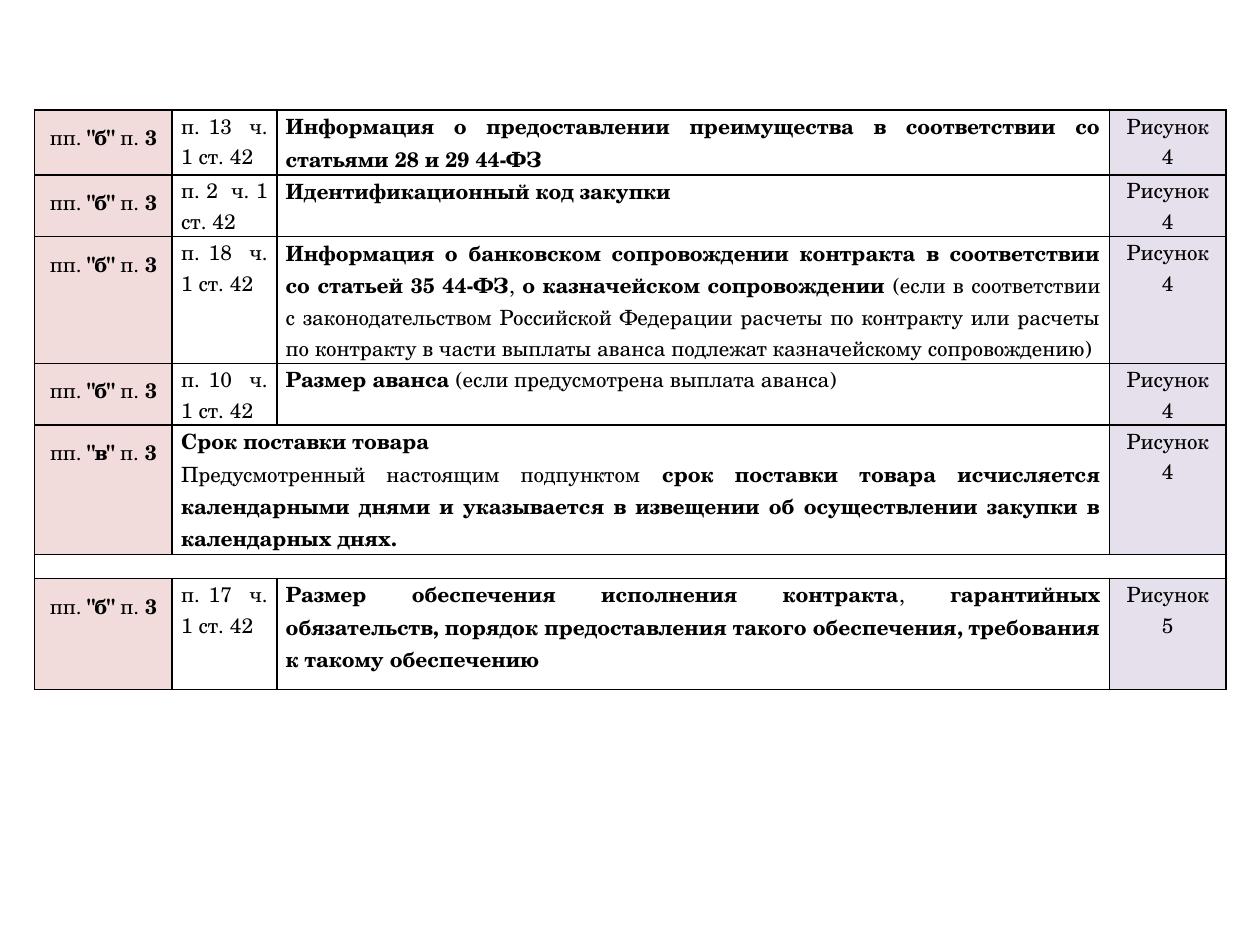
from lxml import etree
from pptx import Presentation
from pptx import util as u
from pptx.dml.color import RGBColor
from pptx.enum import text
from pptx.oxml.ns import qn

PINK, LILAC, BLACK = "F2DCDB", "E6E0EC", "000000"
COLUMN_WIDTHS = [2.77, 2.11, 16.79, 2.34]
CENTER, JUSTIFY = text.PP_ALIGN.CENTER, text.PP_ALIGN.JUSTIFY
POINT_B = 'пп. **"б" **п. **3**'

# Each row: height in cm, then cell texts; ** switches bold, None continues a merged cell
ROWS = [
    (1.17, [POINT_B, "п. 13  ч. 1 ст. 42",
            "**Информация о предоставлении преимущества в соответствии со "
            "статьями 28 и 29 44-ФЗ**", "Рисунок 4"]),
    (1.17, [POINT_B, "п. 2  ч. 1 ст. 42",
            "**Идентификационный код закупки**", "Рисунок 4"]),
    (1.17, [POINT_B, "п. 18  ч. 1 ст. 42",
            "**Информация о банковском сопровождении контракта в соответствии со "
            "статьей 35 44-ФЗ**, **о казначейском сопровождении **(если в соответствии "
            "с законодательством Российской Федерации расчеты по контракту или расчеты "
            "по контракту в части выплаты аванса подлежат казначейскому сопровождению)",
            "Рисунок 4"]),
    (1.12, [POINT_B, "п. 10  ч. 1 ст. 42",
            "**Размер аванса **(если предусмотрена выплата аванса)", "Рисунок 4"]),
    (1.73, ['пп. **"в"** п. **3**',
            "**Срок поставки товара**\nПредусмотренный настоящим подпунктом** срок "
            "поставки товара исчисляется календарными днями и указывается в извещении "
            "об осуществлении закупки в календарных днях.**", None, "Рисунок 4"]),
    (0.48, ["", None, None, None]),
    (2.24, [POINT_B, "п. 17  ч. 1 ст. 42",
            "**Размер обеспечения исполнения контракта**, **гарантийных обязательств, "
            "порядок предоставления такого обеспечения, требования к такому "
            "обеспечению**", "Рисунок 5"]),
]


def color(value):
    return RGBColor.from_string(value)


class SlideBuilder:
    font_name = "TeX Gyre Schola"
    font_size = 12

    def __init__(self, slide):
        self.slide = slide

    def table(self, left, top, widths, rows):
        shape = self.slide.shapes.add_table(
            len(rows), len(widths), u.Cm(left), u.Cm(top),
            u.Cm(sum(widths)), u.Cm(sum(height for height, _ in rows)))
        table = shape.table
        table.first_row = table.horz_banding = False
        for column, width in zip(table.columns, widths):
            column.width = u.Cm(width)
        for row_index, (height, texts) in enumerate(rows):
            table.rows[row_index].height = u.Cm(height)
            for column_index, content in enumerate(texts):
                self.cell(table.cell(row_index, column_index), column_index, content)
            self.merge_continued(table, row_index, texts)

    def merge_continued(self, table, row_index, texts):
        for start, content in enumerate(texts):
            end = start
            while end + 1 < len(texts) and texts[end + 1] is None:
                end += 1
            if content is not None and end > start:
                table.cell(row_index, start).merge(table.cell(row_index, end))

    def cell(self, cell, column_index, content):
        first = column_index == 0
        self.borders(cell)
        fill = {0: PINK, 3: LILAC}.get(column_index) if content else None
        if fill:
            cell.fill.solid()
            cell.fill.fore_color.rgb = color(fill)
        else:
            cell.fill.background()
        if not first or not content:
            cell.margin_left = cell.margin_right = u.Cm(0.18)
            cell.margin_top = cell.margin_bottom = 0
        if not content:
            # Keep the empty row low
            paragraph = cell.text_frame.paragraphs[0]
            etree.SubElement(paragraph._p, qn("a:endParaRPr"), sz="500")
            return
        cell.text_frame.text = content
        for paragraph in cell.text_frame.paragraphs:
            self.rich_text(paragraph)
            paragraph.alignment = CENTER if column_index in (0, 3) else JUSTIFY
            if first:
                paragraph.line_spacing = 1.15

    def rich_text(self, paragraph):
        parts = paragraph.text.split("**")
        paragraph.clear()
        for index, part in enumerate(parts):
            if part:
                run = paragraph.add_run()
                run.text = part
                run.font.name = self.font_name
                run.font.size = u.Pt(self.font_size)
                run.font.bold = index % 2 == 1
                run.font.color.rgb = color(BLACK)

    def borders(self, cell):
        properties = cell._tc.get_or_add_tcPr()
        for side in ("lnL", "lnR", "lnT", "lnB"):
            line = etree.SubElement(properties, qn(f"a:{side}"), w=str(u.Pt(1)))
            solid = etree.SubElement(line, qn("a:solidFill"))
            etree.SubElement(solid, qn("a:srgbClr"), val=BLACK)


def main():
    presentation = Presentation()
    presentation.slide_width = u.Cm(25.4)
    presentation.slide_height = u.Cm(19.05)
    slide = presentation.slides.add_slide(presentation.slide_layouts[6])

    # Table of notice requirements
    SlideBuilder(slide).table(0.7, 2.22, COLUMN_WIDTHS, ROWS)
    presentation.save("out.pptx")


if __name__ == "__main__":
    main()
